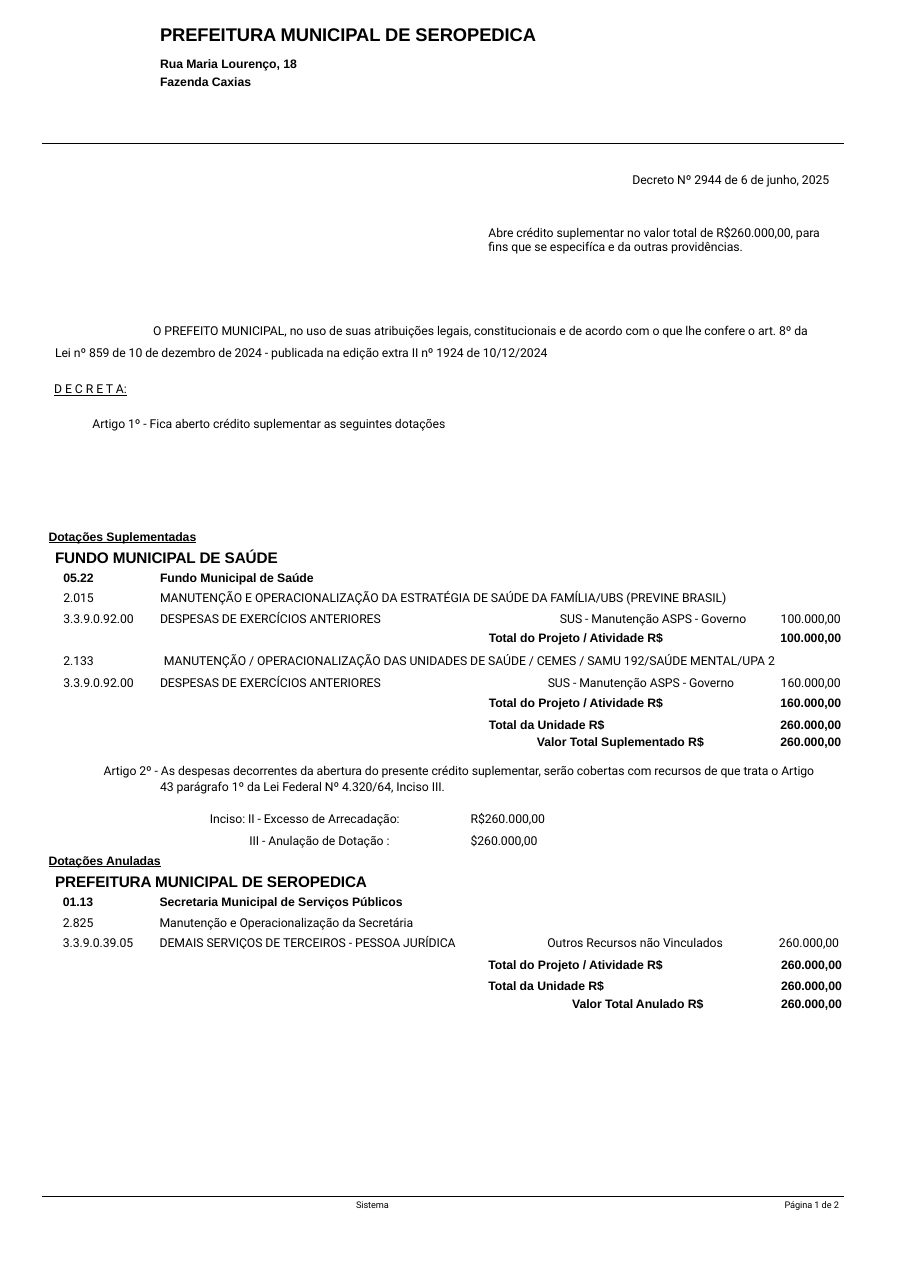
from dataclasses import dataclass
from typing import Optional

import lxml.etree
import pptx
import pptx.dml.color
import pptx.enum.shapes
import pptx.enum.text
import pptx.oxml.ns
import pptx.util

Cm = pptx.util.Cm
Pt = pptx.util.Pt
Align = pptx.enum.text.PP_ALIGN
INK = "000000"
RULE_LEFT, RULE_RIGHT = 0.97, 19.46


@dataclass(frozen=True)
class Entry:
    text: str
    left: float = 0.03
    first: float = 0
    size: float = 8
    bold: bool = False
    underline: bool = False
    line: Optional[float] = None
    before: float = 0
    align: Align = Align.LEFT


@dataclass(frozen=True)
class Block:
    x: float
    y: float
    width: float
    height: float
    top: float
    entries: tuple[Entry, ...]


@dataclass(frozen=True)
class Row:
    height: float
    top: float
    entries: dict[int, Entry]
    span: Optional[tuple[int, int]] = None


@dataclass(frozen=True)
class Budget:
    x: float
    y: float
    widths: tuple[float, ...]
    rows: tuple[Row, ...]


def colour(value: str) -> pptx.dml.color.RGBColor:
    return pptx.dml.color.RGBColor.from_string(value)


def write_entry(paragraph, entry: Entry) -> None:
    paragraph.text = entry.text
    paragraph.alignment = entry.align
    paragraph.space_before = Pt(entry.before)
    if entry.line:
        paragraph.line_spacing = entry.line
    properties = paragraph._p.get_or_add_pPr()
    properties.set("marL", str(Cm(entry.left)))
    properties.set("indent", str(Cm(entry.first)))
    font = paragraph.font
    font.name = "Arial" if entry.bold else "Roboto"
    font.size = Pt(entry.size)
    font.bold = entry.bold
    font.underline = entry.underline
    font.color.rgb = colour(INK)
    font._rPr.set("spc", "-5")
    if not entry.text:
        paragraph._p.get_or_add_endParaRPr().set("sz", str(int(entry.size * 100)))


def fill_block(shape, block: Block) -> None:
    shape.left, shape.top = Cm(block.x), Cm(block.y)
    shape.width, shape.height = Cm(block.width), Cm(block.height)
    frame = shape.text_frame
    frame.word_wrap = True
    frame.auto_size = pptx.enum.text.MSO_AUTO_SIZE.NONE
    frame.vertical_anchor = pptx.enum.text.MSO_ANCHOR.TOP
    frame.margin_left = frame.margin_right = frame.margin_bottom = 0
    frame.margin_top = Cm(block.top)
    for number, entry in enumerate(block.entries):
        write_entry(frame.add_paragraph() if number else frame.paragraphs[0], entry)


def draw_budget(slide, budget: Budget) -> None:
    table = slide.shapes.add_table(
        len(budget.rows), len(budget.widths), Cm(budget.x), Cm(budget.y),
        Cm(sum(budget.widths)), Cm(sum(row.height for row in budget.rows)),
    ).table
    table.first_row = table.horz_banding = False
    for column, width in zip(table.columns, budget.widths):
        column.width = Cm(width)
    for number, row in enumerate(budget.rows):
        table.rows[number].height = Cm(row.height)
        for position in range(len(budget.widths)):
            cell = table.cell(number, position)
            cell.fill.background()
            cell.margin_left = cell.margin_bottom = 0
            entry = row.entries.get(position, Entry(""))
            cell.margin_right = Cm(0.08 if entry.align == Align.RIGHT else 0)
            cell.margin_top = Cm(row.top)
            write_entry(cell.text_frame.paragraphs[0], entry)
        if row.span:
            start, end = row.span
            table.cell(number, start).merge(table.cell(number, end))


def draw_rule(slide, y: float) -> None:
    rule = slide.shapes.add_connector(
        pptx.enum.shapes.MSO_CONNECTOR.STRAIGHT, Cm(RULE_LEFT), Cm(y), Cm(RULE_RIGHT), Cm(y))
    rule.line.color.rgb = colour(INK)
    rule.line.width = Pt(0.75)
    lxml.etree.SubElement(rule._element.spPr, pptx.oxml.ns.qn("a:effectLst"))


def code(text: str, bold: bool = False) -> Entry:
    return Entry(text, left=0.08, bold=bold)


def label(text: str, bold: bool = False) -> Entry:
    return Entry(text, left=0.3, bold=bold)


def amount(text: str, bold: bool = False) -> Entry:
    return Entry(text, left=0, bold=bold, align=Align.CENTER)


def total(text: str, left: float) -> Entry:
    return Entry(text, left=left, bold=True)


def section(y: float, heading: str, unit: str) -> Block:
    return Block(1.09, y, 8, 1.02, 0.1, (
        Entry(heading, bold=True, underline=True),
        Entry(unit, left=0.18, size=10, bold=True, before=3)))


PROJECT, UNIT = "Total do Projeto / Atividade R$", "Total da Unidade R$"
PRIOR_YEARS, HEALTH_SOURCE = "DESPESAS DE EXERCÍCIOS ANTERIORES", "SUS - Manutenção ASPS - Governo"
HEADER = Block(3.66, 0.51, 10, 1.6, 0.03, (
    Entry("PREFEITURA MUNICIPAL DE SEROPEDICA", size=12, bold=True),
    Entry("Rua Maria Lourenço, 18\vFazenda Caxias", bold=True, line=1.25, before=4.7)))
BLOCKS = (
    Block(14.55, 3.94, 5, 0.41, 0.03, (Entry("Decreto Nº 2944 de 6 de junho, 2025"),)),
    Block(11.23, 5.16, 8.1, 0.74, 0.05, (
        Entry("Abre crédito suplementar no valor total de R$260.000,00, para\v"
              "fins que se especifíca e da outras providências.", line=Pt(9.1)),)),
    Block(1.22, 7.26, 18.1, 2.69, 0.03, (
        Entry("O PREFEITO MUNICIPAL, no uso de suas atribuições legais, constitucionais e de acordo "
              "com o que lhe confere o art. 8º da\v"
              "Lei nº 859 de 10 de dezembro de 2024 - publicada na edição extra II nº 1924 de 10/12/2024",
              left=0.05, first=2.26, line=1.5),
        Entry("D E C R E T A:", underline=True, before=14),
        Entry("Artigo 1º - Fica aberto crédito suplementar as seguintes dotações", left=0.91, before=13))),
    section(12.09, "Dotações Suplementadas", "FUNDO MUNICIPAL DE SAÚDE"),
    Block(2.34, 17.53, 16.9, 0.81, 0.03, (
        Entry("Artigo 2º - As despesas decorrentes da abertura do presente crédito suplementar, serão "
              "cobertas com recursos de que trata o Artigo\v"
              "43 parágrafo 1º da Lei Federal Nº 4.320/64, Inciso III.", left=1.35, first=-1.3, line=1.1),)),
    Block(4.8, 18.52, 4.8, 1.09, 0.02, (
        Entry("Inciso: II - Excesso de Arrecadação:\vIII - Anulação de Dotação :",
              left=0.95, first=-0.91, line=1.5),)),
    Block(10.82, 18.52, 2, 1.09, 0.18, (Entry("R$260.000,00"), Entry("$260.000,00", before=4.8))),
    section(19.56, "Dotações Anuladas", "PREFEITURA MUNICIPAL DE SEROPEDICA"),
    Block(8.18, 27.64, 1.2, 0.3, 0, (Entry("Sistema", size=6),)),
    Block(18.06, 27.64, 1.5, 0.3, 0, (Entry("Página 1 de 2", size=6),)),
)
BUDGETS = (
    Budget(1.38, 13.17, (2.01, 7.62, 6.91, 1.55), (
        Row(0.41, 0, {0: code("05.22", True), 1: label("Fundo Municipal de Saúde", True)}),
        Row(0.48, 0.05, {0: code("2.015"), 1: label(
            "MANUTENÇÃO E OPERACIONALIZAÇÃO DA ESTRATÉGIA DE SAÚDE DA FAMÍLIA/UBS (PREVINE BRASIL)")}, (1, 2)),
        Row(0.46, 0.05, {0: code("3.3.9.0.92.00"), 1: label(PRIOR_YEARS),
                         2: Entry(HEALTH_SOURCE, left=1.9), 3: amount("100.000,00")}),
        Row(0.48, 0.03, {2: total(PROJECT, 0.26), 3: amount("100.000,00", True)}),
        Row(0.51, 0.08, {0: code("2.133"), 1: Entry(
            "MANUTENÇÃO / OPERACIONALIZAÇÃO DAS UNIDADES DE SAÚDE / CEMES / SAMU 192/SAÚDE MENTAL/UPA 2",
            left=0.39)}, (1, 3)),
        Row(0.48, 0.08, {0: code("3.3.9.0.92.00"), 1: label(PRIOR_YEARS),
                         2: Entry(HEALTH_SOURCE, left=1.62), 3: amount("160.000,00")}),
        Row(0.48, 0.05, {2: total(PROJECT, 0.26), 3: amount("160.000,00", True)}),
        Row(0.46, 0.08, {2: total(UNIT, 0.26), 3: amount("260.000,00", True)}),
        Row(0.36, 0.03, {2: total("Valor Total Suplementado R$", 1.37), 3: amount("260.000,00", True)}))),
    Budget(1.37, 20.63, (2.01, 8.53, 5.44, 2.08), (
        Row(0.41, 0, {0: code("01.13", True), 1: label("Secretaria Municipal de Serviços Públicos", True)}, (2, 3)),
        Row(0.48, 0.08, {0: code("2.825"), 1: label("Manutenção e Operacionalização da Secretária")}),
        Row(0.38, 0.05, {0: code("3.3.9.0.39.05"), 1: label("DEMAIS SERVIÇOS DE TERCEIROS - PESSOA JURÍDICA"),
                         2: Entry("Outros Recursos não Vinculados", left=0.71),
                         3: Entry("260.000,00", left=0.61)}))),
    Budget(11.18, 22.09, (5.97, 2.34), tuple(
        Row(height, top, {0: total(text, left), 1: Entry("260.000,00", left=0, bold=True, align=Align.RIGHT)})
        for height, top, text, left in (
            (0.41, 0, PROJECT, 0.08), (0.46, 0.08, UNIT, 0.08), (0.36, 0.03, "Valor Total Anulado R$", 2.01)))),
)


def main() -> None:
    deck = pptx.Presentation()
    deck.slide_width, deck.slide_height = Cm(20.98), Cm(29.69)
    slide = deck.slides.add_slide(deck.slide_layouts[5])
    fill_block(slide.shapes.title, HEADER)
    for y in (3.3, 27.58):
        draw_rule(slide, y)
    for block in BLOCKS:
        fill_block(slide.shapes.add_textbox(0, 0, 0, 0), block)
    for budget in BUDGETS:
        draw_budget(slide, budget)
    deck.save("out.pptx")


if __name__ == "__main__":
    main()
